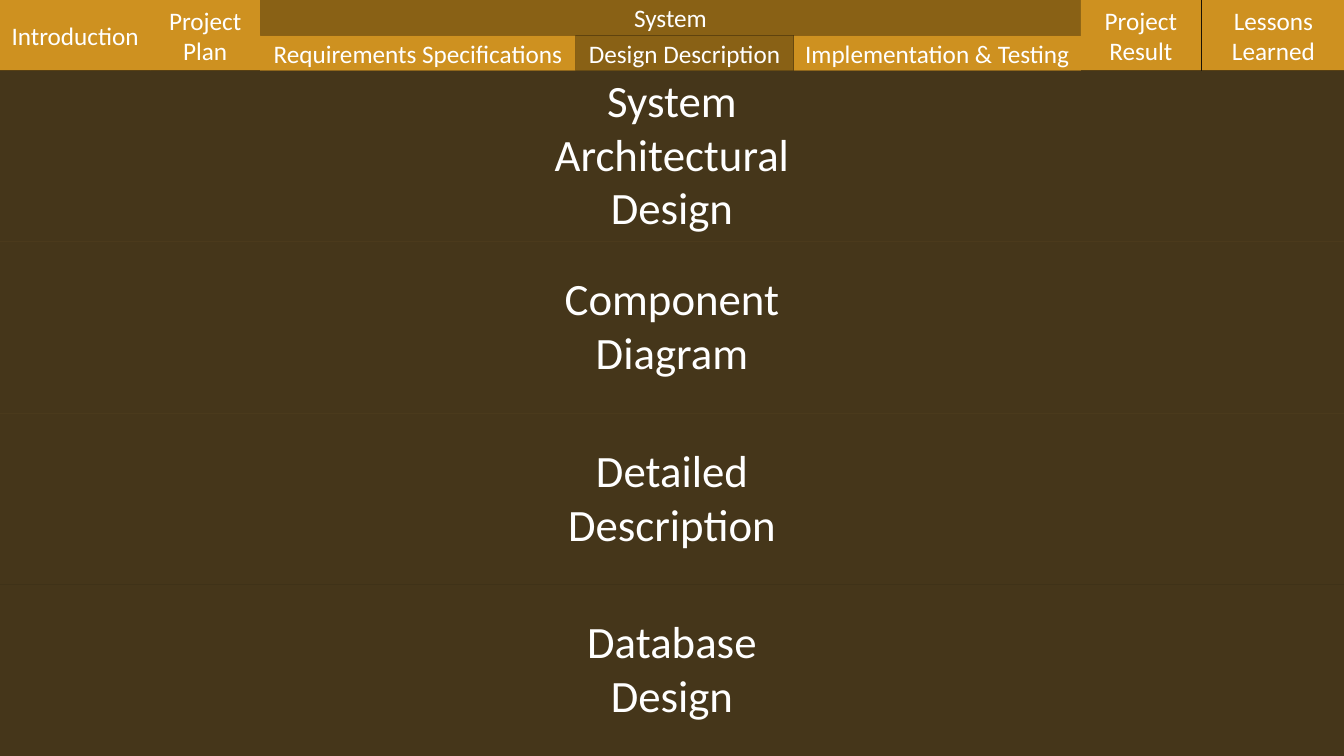
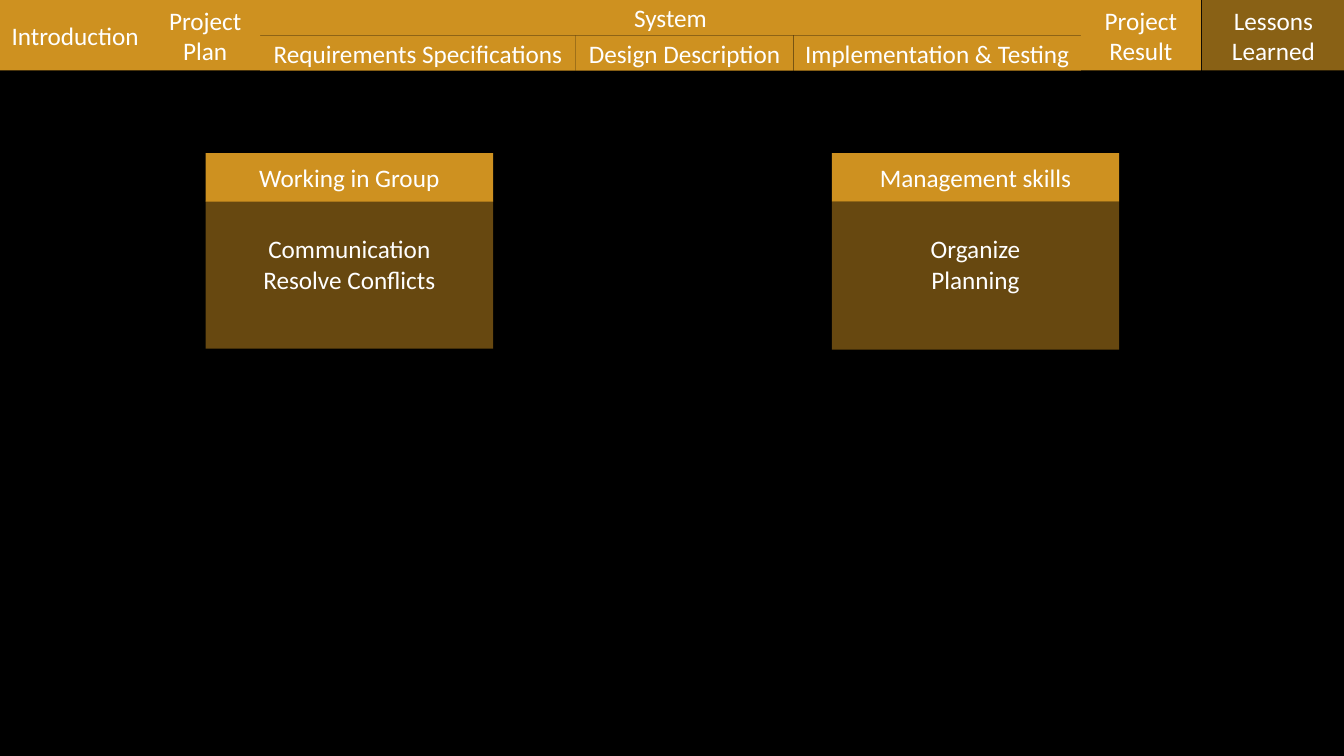
import dataclasses

import lxml.etree
import pptx
import pptx.dml.color
import pptx.enum.shapes
import pptx.enum.text
import pptx.oxml.ns
import pptx.util

Inches = pptx.util.Inches
RGBColor = pptx.dml.color.RGBColor

BLACK = RGBColor(0x00, 0x00, 0x00)
WHITE = RGBColor(0xFF, 0xFF, 0xFF)
GOLD = RGBColor(0xCE, 0x91, 0x20)
BROWN = RGBColor(0x89, 0x61, 0x15)
SAND = RGBColor(0xE5, 0xB4, 0x58)

FONT = "Calibri"
WIDTH = 13.33
HEIGHT = 7.5
BAR = 0.7
HALF = BAR / 2
CARD = 2.85
HEAD = 1.52


@dataclasses.dataclass(frozen=True)
class Box:
    left: float
    top: float
    width: float
    height: float


@dataclasses.dataclass(frozen=True)
class Tab:
    text: str
    box: Box


@dataclasses.dataclass(frozen=True)
class Topic:
    text: str
    width: float
    height: float = 1.18


@dataclasses.dataclass(frozen=True)
class Card:
    title: str
    body: str
    left: float
    top: float
    wide: float
    inner: float


TABS = [
    Tab("Introduction", Box(0, 0, 1.49, BAR)),
    Tab("Project Plan", Box(1.49, 0, 1.09, BAR)),
    Tab("System", Box(2.58, 0, 8.14, HALF)),
    Tab("Requirements Specifications", Box(2.58, HALF, 3.13, HALF)),
    Tab("Design Description", Box(5.71, HALF, 2.16, HALF)),
    Tab("Implementation & Testing", Box(7.87, HALF, 2.85, HALF)),
    Tab("Project Result", Box(10.72, 0, 1.19, BAR)),
    Tab("Lessons Learned", Box(11.92, 0, 1.42, BAR)),
]

TOPICS = [
    Topic("System\nArchitectural\nDesign", 2.55, 1.72),
    Topic("Component\nDiagram", 2.35),
    Topic("Detailed\nDescription", 2.29),
    Topic("Database\nDesign", 1.9),
]

CARDS = [
    Card("Working in Group", "Communication\nResolve Conflicts", 2.04, 1.99, 2.01, 2.47),
    Card("Management skills", "Organize\nPlanning", 8.25, 2.0, 2.12, 1.62),
]


def place(box: Box) -> list:
    return [Inches(side) for side in (box.left, box.top, box.width, box.height)]


def write(frame, text: str, *, size: int = 18, color: RGBColor = WHITE, wrap: bool = True) -> None:
    frame.word_wrap = wrap
    frame.text = text
    for line in frame.paragraphs:
        line.alignment = pptx.enum.text.PP_ALIGN.CENTER
        line.font.name = FONT
        line.font.size = pptx.util.Pt(size)
        line.font.color.rgb = color


def block(slide, box: Box, color: RGBColor, alpha: int = 100):
    shape = slide.shapes.add_shape(pptx.enum.shapes.MSO_SHAPE.RECTANGLE, *place(box))
    shape.shadow.inherit = False
    shape.line.fill.background()
    shape.fill.solid()
    shape.fill.fore_color.rgb = color
    if alpha < 100:
        qn = pptx.oxml.ns.qn
        tint = shape.element.spPr.find(qn("a:solidFill")).find(qn("a:srgbClr"))
        lxml.etree.SubElement(tint, qn("a:alpha"), val=str(alpha * 1000))
    return shape


def label(slide, text: str, box: Box, *, size: int = 18, wrap: bool = False) -> None:
    frame = slide.shapes.add_textbox(*place(box)).text_frame
    write(frame, text, size=size, wrap=wrap)
    frame.auto_size = pptx.enum.text.MSO_AUTO_SIZE.SHAPE_TO_FIT_TEXT


def start(deck, active: set[str]):
    slide = deck.slides.add_slide(deck.slide_layouts[6])
    slide.background.fill.solid()
    slide.background.fill.fore_color.rgb = BLACK
    for tab in TABS:
        shape = block(slide, tab.box, BROWN if tab.text in active else GOLD)
        shape.text_frame.vertical_anchor = pptx.enum.text.MSO_ANCHOR.MIDDLE
        write(shape.text_frame, tab.text)
    return slide


def design(deck) -> None:
    slide = start(deck, {"System", "Design Description"})
    step = (HEIGHT - BAR) / len(TOPICS)
    for row, topic in enumerate(TOPICS):
        top = BAR + row * step
        block(slide, Box(0, top, WIDTH, step), SAND, alpha=30)
        left = (WIDTH - topic.width) / 2
        inset = (step - topic.height) / 2 - 0.02
        label(slide, topic.text, Box(left, top + inset, topic.width, topic.height), size=32)


def lessons(deck) -> None:
    slide = start(deck, {"Lessons Learned"})
    for card in CARDS:
        block(slide, Box(card.left, card.top, CARD, 1.47), GOLD, alpha=50)
        block(slide, Box(card.left, HEAD, CARD, 0.48), GOLD)
        mid = card.left + CARD / 2
        label(slide, card.title, Box(mid - card.wide / 2, HEAD + 0.04, card.wide, 0.4))
        label(slide, card.body, Box(mid - card.inner / 2, 2.27, card.inner, 0.71), wrap=True)


def main() -> None:
    deck = pptx.Presentation()
    deck.slide_width = Inches(WIDTH)
    deck.slide_height = Inches(HEIGHT)
    design(deck)
    lessons(deck)
    deck.save("out.pptx")


if __name__ == "__main__":
    main()
